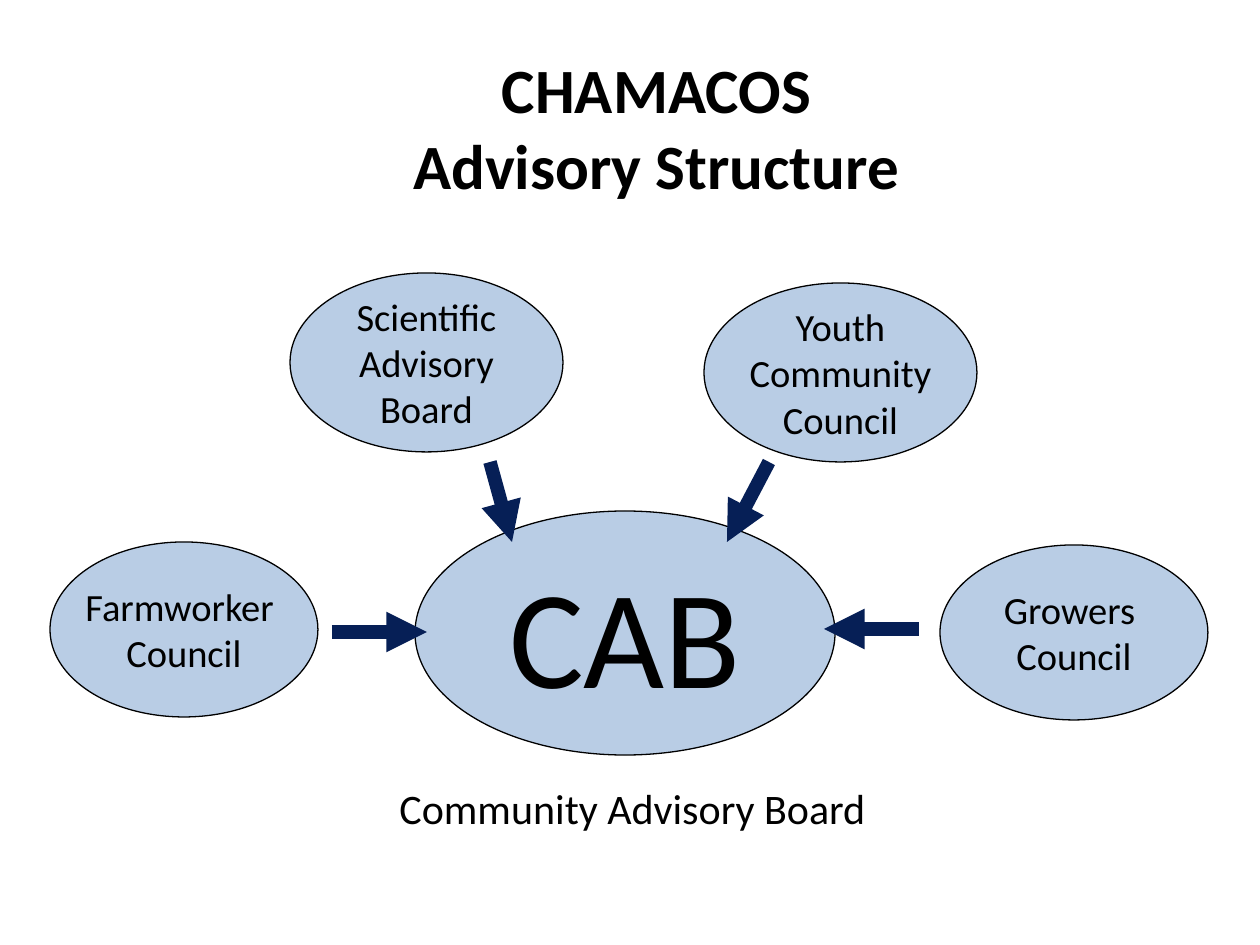
from lxml.etree import SubElement
from pptx import Presentation
from pptx.dml.color import RGBColor
from pptx.enum.shapes import MSO_CONNECTOR, MSO_SHAPE
from pptx.enum.text import MSO_ANCHOR, PP_ALIGN
from pptx.oxml.ns import qn
from pptx.util import Emu, Pt

COLORS = {"text": "000000", "oval": "B9CDE5", "outline": "000000", "arrow": "061F56"}
FONT = "Calibri"
PX = 914400 // 126

TITLE = (["CHAMACOS", "Advisory Structure"], (305, 42, 703, 168))
CAPTION = (["Community Advisory Board"], (387, 776, 500, 64))
BOARDS = [
    (["CAB"], (415, 511, 420, 244), 80),
    (["Farmworker ", "Council"], (50, 542, 268, 175), 22),
    (["Youth", " Community ", "Council"], (704, 283, 273, 179), 22),
    (["Growers ", "Council"], (940, 545, 268, 175), 22),
    (["Scientific", "Advisory", "Board"], (290, 273, 273, 179), 22),
]
ARROWS = [
    ((332, 632), (427, 632)),
    ((919, 629), (824, 629)),
    ((490, 462), (512, 542)),
    ((769, 462), (727, 542)),
]


def px(values):
    return [Emu(value * PX) for value in values]


def color(name):
    return RGBColor.from_string(COLORS[name])


def write(frame, lines, size, bold=False, align=PP_ALIGN.CENTER,
          anchor=MSO_ANCHOR.MIDDLE, wrap=True):
    frame.word_wrap = wrap
    frame.vertical_anchor = anchor
    for index, line in enumerate(lines):
        paragraph = frame.add_paragraph() if index else frame.paragraphs[0]
        paragraph.alignment = align
        run = paragraph.add_run()
        run.text = line
        run.font.name = FONT
        run.font.size = Pt(size)
        run.font.bold = bold
        run.font.color.rgb = color("text")


def add_board(slide, lines, box, size):
    oval = slide.shapes.add_shape(MSO_SHAPE.OVAL, *px(box))
    oval.shadow.inherit = False
    oval.fill.solid()
    oval.fill.fore_color.rgb = color("oval")
    oval.line.color.rgb = color("outline")
    oval.line.width = Pt(0.75)
    write(oval.text_frame, lines, size, wrap=False)


def add_arrow(slide, start, end):
    arrow = slide.shapes.add_connector(MSO_CONNECTOR.STRAIGHT, *px(start + end))
    arrow.line.color.rgb = color("arrow")
    arrow.line.width = Pt(7.75)
    SubElement(arrow.line._get_or_add_ln(), qn("a:tailEnd"), type="triangle")
    SubElement(arrow._element.spPr, qn("a:effectLst"))


def main():
    deck = Presentation()
    deck.slide_width, deck.slide_height = px((1260, 945))
    slide = deck.slides.add_slide(deck.slide_layouts[6])

    title, title_box = TITLE
    write(slide.shapes.add_textbox(*px(title_box)).text_frame, title, 36, bold=True)
    for board in BOARDS:
        add_board(slide, *board)
    for arrow in ARROWS:
        add_arrow(slide, *arrow)
    caption, caption_box = CAPTION
    write(slide.shapes.add_textbox(*px(caption_box)).text_frame, caption, 24,
          align=PP_ALIGN.LEFT, anchor=MSO_ANCHOR.TOP)

    deck.save("out.pptx")


if __name__ == "__main__":
    main()
